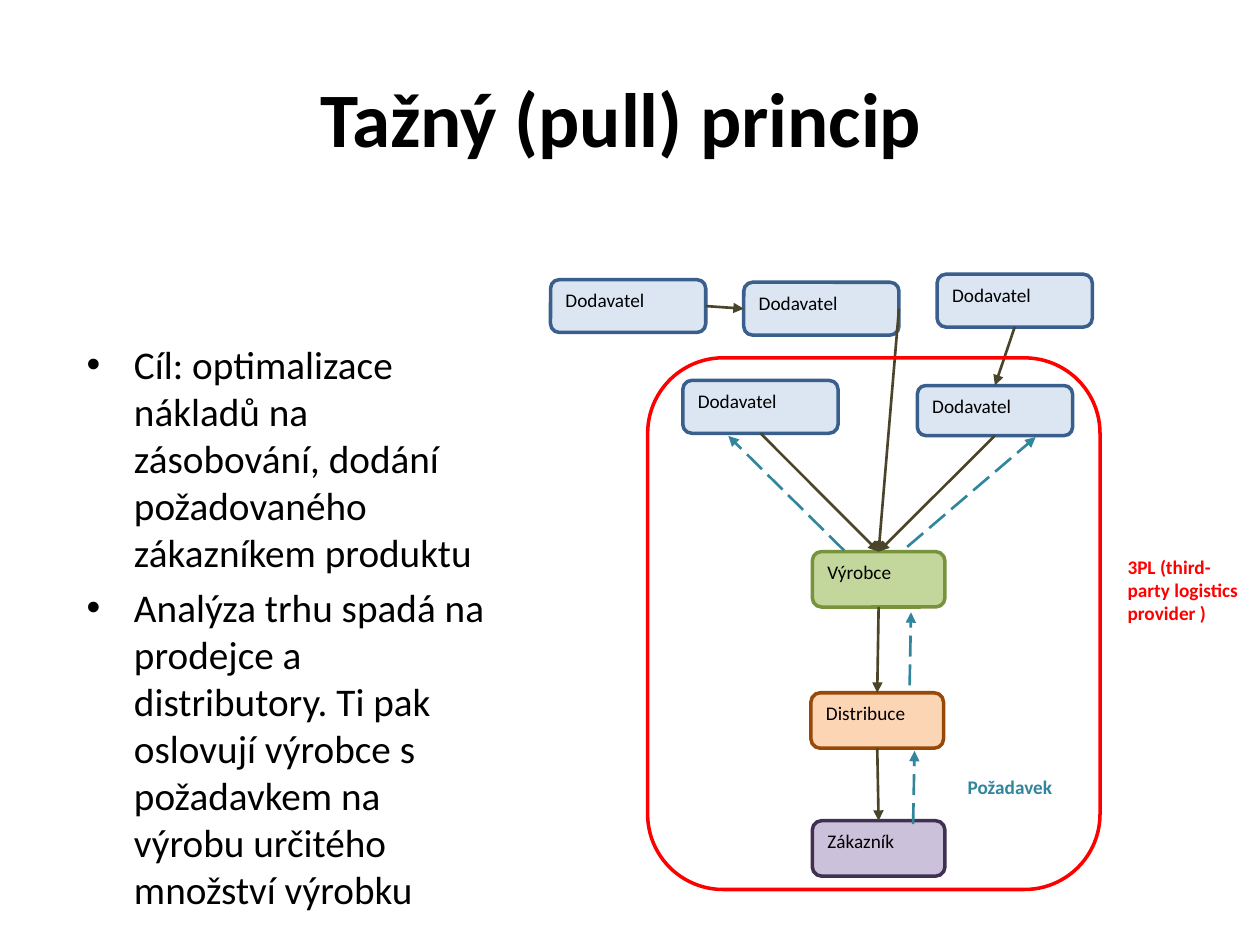
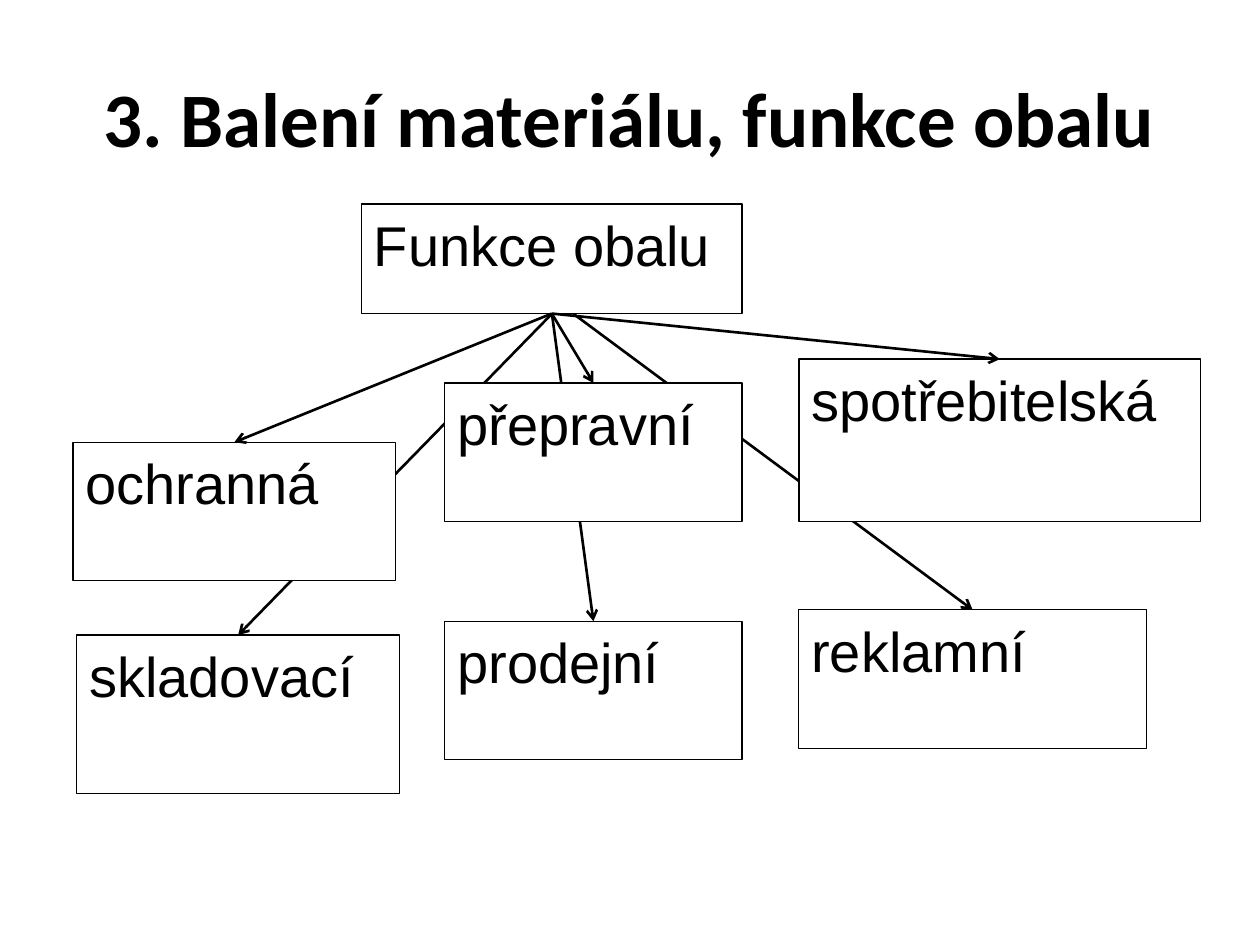
from pptx import Presentation
from pptx.dml.color import RGBColor
from pptx.enum.dml import MSO_LINE_DASH_STYLE as DASH
from pptx.enum.shapes import MSO_CONNECTOR, MSO_SHAPE
from pptx.enum.text import MSO_ANCHOR, PP_ALIGN
from pptx.oxml.ns import qn
from pptx.util import Pt
from lxml.etree import SubElement

BLACK = RGBColor(0x00, 0x00, 0x00)
WHITE = RGBColor(0xFF, 0xFF, 0xFF)
RED = RGBColor(0xFF, 0x00, 0x00)
TEAL = RGBColor(0x31, 0x85, 0x9C)
BROWN = RGBColor(0x4A, 0x45, 0x2A)
BLUE_FILL, BLUE_LINE = RGBColor(0xDC, 0xE6, 0xF2), RGBColor(0x3A, 0x5F, 0x8C)
GREEN_FILL, GREEN_LINE = RGBColor(0xC3, 0xD6, 0x9B), RGBColor(0x77, 0x93, 0x3C)
ORANGE_FILL, ORANGE_LINE = RGBColor(0xFC, 0xD5, 0xB5), RGBColor(0x98, 0x48, 0x07)
PURPLE_FILL, PURPLE_LINE = RGBColor(0xCC, 0xC1, 0xDA), RGBColor(0x40, 0x31, 0x52)

# Connection sites of a box
TOP, LEFT, BOTTOM, RIGHT = range(4)


def add_box(slide, place, text="", kind=None, fill=None, line=None, width=2,
            align=PP_ALIGN.LEFT, anchor=MSO_ANCHOR.TOP, **font):
    """Add a preset shape, or a plain text box if no kind is given."""
    place = [Pt(v) for v in place]
    if kind is None:
        box = slide.shapes.add_textbox(*place)
    else:
        box = slide.shapes.add_shape(kind, *place)
        box.shadow.inherit = False
        box.line.color.rgb = line
        box.line.width = Pt(width)
        if fill is None:
            box.fill.background()
        else:
            box.fill.solid()
            box.fill.fore_color.rgb = fill
    frame = box.text_frame
    frame.word_wrap = True
    frame.vertical_anchor = anchor
    if text:
        paragraph = frame.paragraphs[0]
        paragraph.alignment = align
        run = paragraph.add_run()
        run.text = text
        style = {"name": "Calibri", "size": Pt(11), "bold": False} | font
        run.font.color.rgb = style.pop("color", BLACK)
        for key, value in style.items():
            setattr(run.font, key, value)
    return box


def add_arrow(slide, start, end, color, head="triangle", dash=None):
    """Join two (x, y) points or two (box, site) pairs with an arrow."""
    glued = not isinstance(start[0], (int, float))
    ends = (0, 0, 0, 0) if glued else (*start, *end)
    arrow = slide.shapes.add_connector(MSO_CONNECTOR.STRAIGHT, *[Pt(v) for v in ends])
    if glued:
        arrow.begin_connect(*start)
        arrow.end_connect(*end)
    arrow.line.color.rgb = color
    arrow.line.width = Pt(1.5)
    if dash:
        arrow.line.dash_style = dash
    properties = arrow.line._get_or_add_ln()
    SubElement(properties, qn("a:tailEnd"), type=head)
    SubElement(properties.getparent(), qn("a:effectLst"))


deck = Presentation()
deck.slide_width, deck.slide_height = Pt(720), Pt(540)
blank = deck.slide_layouts[6]
pull, packaging = [deck.slides.add_slide(blank) for _ in range(2)]

TITLE_PLACE = (36, 21.6, 648, 90)
TITLE = {"align": PP_ALIGN.CENTER, "anchor": MSO_ANCHOR.MIDDLE, "size": Pt(44), "bold": True}

# Slide 1: title and bullets
add_box(pull, TITLE_PLACE, "Tažný (pull) princip ", **TITLE)
goals = add_box(pull, (42.5, 190.8, 249.1, 306)).text_frame
for i, goal in enumerate((
    "Cíl: optimalizace nákladů na zásobování, dodání požadovaného zákazníkem produktu",
    "Analýza trhu spadá na prodejce a distributory. Ti pak oslovují výrobce "
    "s požadavkem na výrobu určitého množství výrobku",
)):
    paragraph = goals.add_paragraph() if i else goals.paragraphs[0]
    if i:
        paragraph.space_before = Pt(4.5)
    layout = paragraph._p.get_or_add_pPr()
    layout.set("marL", str(Pt(27)))
    layout.set("indent", str(-Pt(27)))
    SubElement(layout, qn("a:buFont"), typeface="Arial")
    SubElement(layout, qn("a:buChar"), char="•")
    run = paragraph.add_run()
    run.text = goal
    run.font.name, run.font.size = "Calibri", Pt(22.4)
    run.font.color.rgb = BLACK

# Slide 1: suppliers
near_left, near_right, far_left, far_middle, far_right = [
    add_box(pull, (x, y, 88.7, height), "Dodavatel", MSO_SHAPE.ROUNDED_RECTANGLE,
            BLUE_FILL, BLUE_LINE)
    for x, y, height in (
        (390.2, 217.4, 30.2), (524.2, 220.3, 28.6),
        (314.6, 159.8, 30.2), (425, 161.3, 30.2), (535.5, 156.7, 30.2),
    )
]

# Slide 1: chain from maker to customer
maker, distribution, customer = [
    add_box(pull, (x, y, 75.8, 31.7), text, MSO_SHAPE.ROUNDED_RECTANGLE, fill, line)
    for text, x, y, fill, line in (
        ("Výrobce", 464.2, 315.2, GREEN_FILL, GREEN_LINE),
        ("Distribuce", 463.4, 395.9, ORANGE_FILL, ORANGE_LINE),
        ("Zákazník", 464.2, 469, PURPLE_FILL, PURPLE_LINE),
    )
]

# Slide 1: flow of goods
for start, end in (
    ((near_left, BOTTOM), (maker, TOP)),
    ((near_right, BOTTOM), (maker, TOP)),
    ((maker, BOTTOM), (distribution, TOP)),
    ((distribution, BOTTOM), (customer, TOP)),
    ((far_left, RIGHT), (far_middle, LEFT)),
    ((far_middle, RIGHT), (maker, TOP)),
    ((far_right, BOTTOM), (near_right, TOP)),
):
    add_arrow(pull, start, end, BROWN)

# Slide 1: flow of requests
for start, end in (
    ((521.8, 470.9), (522.6, 429.1)),
    ((519.8, 391.7), (520.6, 349.9)),
    ((518.4, 312.5), (591.8, 249.8)),
    ((482.4, 314.6), (416.2, 249.1)),
):
    add_arrow(pull, start, end, TEAL, dash=DASH.LONG_DASH)
add_box(pull, (545.8, 439.2, 78.5, 49.7), "Požadavek", bold=True, color=TEAL)

# Slide 1: reach of the logistics provider
add_box(pull, (370.1, 204.5, 258.5, 303.8), kind=MSO_SHAPE.ROUNDED_RECTANGLE, line=RED)
add_box(pull, (637.2, 313.9, 82.8, 98.6), "3PL (third-party logistics provider )",
        bold=True, color=RED)

# Slide 2: arrows that run behind the boxes
for start, end in (
    ((315.4, 179.3), (136.1, 362.9)),
    ((327.6, 179.3), (555.8, 348.5)),
    ((315.4, 179.3), (339.1, 355)),
):
    add_arrow(packaging, start, end, BLACK, "arrow")

add_box(packaging, TITLE_PLACE, "3. Balení materiálu, funkce obalu", **TITLE)

# Slide 2: functions of the packaging
root, protective, _, _, _, consumer, transport = [
    add_box(packaging, place, text, MSO_SHAPE.RECTANGLE, WHITE, BLACK, 0.75,
            name="Arial", size=Pt(32))
    for text, *place in (
        ("Funkce obalu", 206.6, 116.6, 217.4, 62.6),
        ("ochranná", 41.8, 252.7, 184.3, 79.2),
        ("skladovací", 43.9, 362.9, 184.3, 90.7),
        ("prodejní", 254.2, 355, 169.9, 79.2),
        ("reklamní", 456.5, 348.5, 198.7, 79.2),
        ("spotřebitelská", 456.5, 205.2, 229.7, 92.9),
        ("přepravní", 254.2, 218.9, 169.9, 79.2),
    )
]
for function in (protective, transport, consumer):
    add_arrow(packaging, (root, BOTTOM), (function, TOP), BLACK, "arrow")

deck.save("out.pptx")
